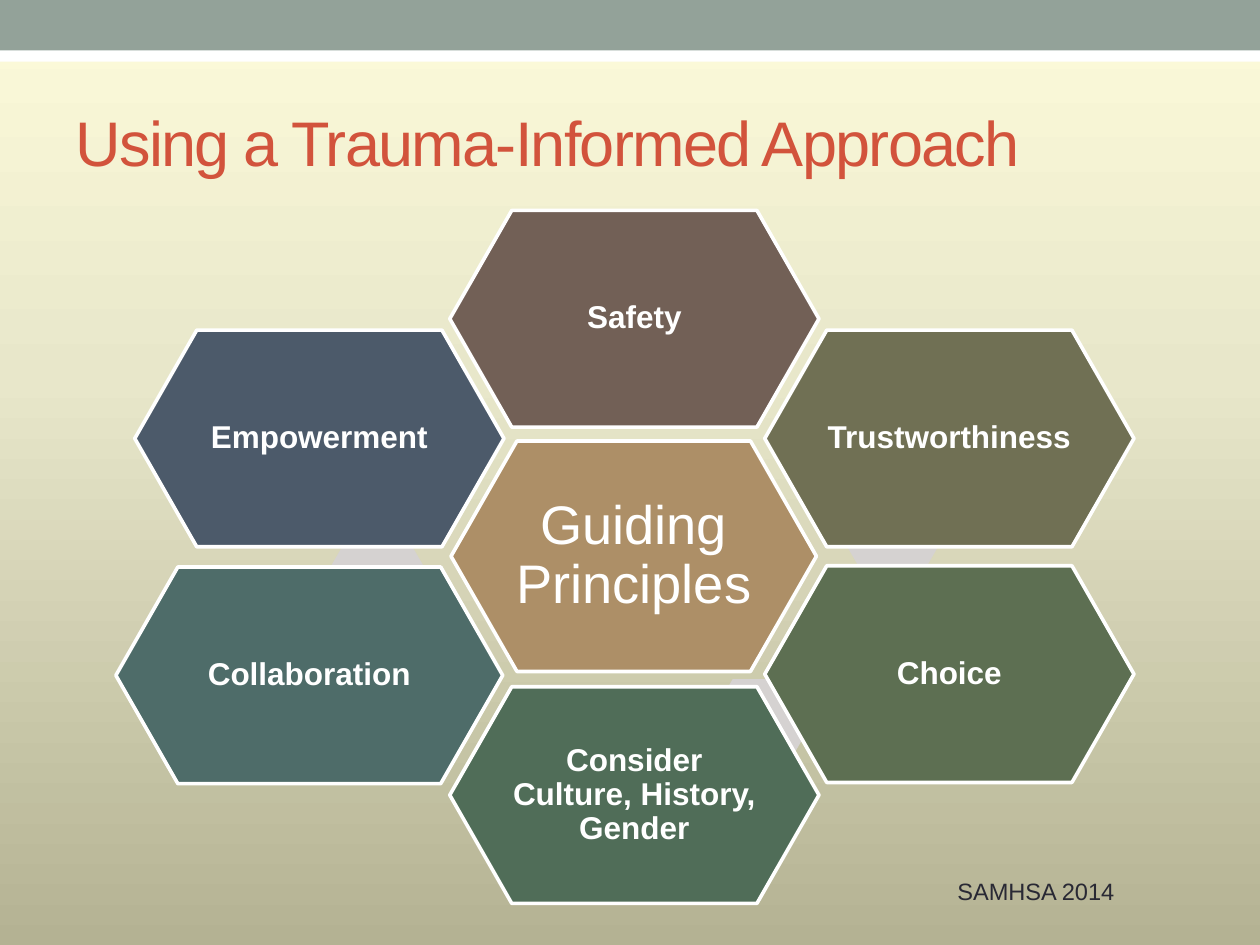
from copy import deepcopy

from pptx import Presentation
from pptx.dml.color import RGBColor
from pptx.enum.shapes import MSO_SHAPE
from pptx.enum.text import MSO_ANCHOR, MSO_AUTO_SIZE, PP_ALIGN
from pptx.util import Inches, Pt

COLORS = {
    "white": "FFFFFF",
    "band": "93A299",
    "title": "D2533C",
    "source": "292934",
    "accent": "D5D2D1",
    "center": "AD8F67",
    "safety": "726056",
    "trust": "707054",
    "choice": "5D6F52",
    "culture": "506D58",
    "collaboration": "4E6C69",
    "empowerment": "4C5A6A",
}
BACKGROUND_STOPS = [(0, "FDFBDA"), (0.4, "E8E7CA"), (1, "B4B293")]


def add_filled_shape(kind, left, top, width, height, color):
    shape = slide.shapes.add_shape(
        kind, Inches(left), Inches(top), Inches(width), Inches(height))
    shape.shadow.inherit = False
    shape.fill.solid()
    shape.fill.fore_color.rgb = RGBColor.from_string(COLORS[color])
    shape.line.fill.background()
    return shape


def add_run(paragraph, text, size, color, bold=False):
    run = paragraph.add_run()
    run.text = text
    run.font.name = "Arial"
    run.font.size = Pt(size)
    run.font.bold = bold
    run.font.color.rgb = RGBColor.from_string(COLORS[color])
    return run


presentation = Presentation()
presentation.slide_width = Inches(10)
presentation.slide_height = Inches(7.5)
slide = presentation.slides.add_slide(presentation.slide_layouts[5])

# Background gradient, top to bottom, with a third stop added
background = slide.background.fill
background.gradient()
background.gradient_angle = 270
stop_list = slide.element.xpath(".//p:bg//a:gsLst")[0]
stop_list.insert(1, deepcopy(stop_list[0]))
for stop, (position, color) in zip(background.gradient_stops, BACKGROUND_STOPS):
    stop.position = position
    stop.color.rgb = RGBColor.from_string(color)

# Top bands
add_filled_shape(MSO_SHAPE.RECTANGLE, 0, 0.24, 10, 0.25, "white")
add_filled_shape(MSO_SHAPE.RECTANGLE, 0, 0, 10, 0.4, "band")

# Title
title = slide.shapes.title
title.left, title.top = Inches(0.5), Inches(0.58)
title.width, title.height = Inches(9), Inches(1.08)
title.text_frame.auto_size = MSO_AUTO_SIZE.NONE
title.text_frame.vertical_anchor = MSO_ANCHOR.MIDDLE
paragraph = title.text_frame.paragraphs[0]
paragraph.alignment = PP_ALIGN.LEFT
run = add_run(paragraph, "Using a Trauma-Informed Approach", 36, "title")
run.font._element.set("spc", "-100")

# Hexagons: text, left, top, width, height, color, size, accent position behind
hexagons = [
    ("Guiding Principles", 3.58, 3.5, 2.9, 1.83, "center", 31, None),
    ("Safety", 3.57, 1.67, 2.93, 1.72, "safety", 18, (5.31, 2.57)),
    ("Trustworthiness", 6.07, 2.62, 2.93, 1.72, "trust", 18, (6.67, 3.89)),
    ("Choice", 6.07, 4.49, 2.93, 1.72, "choice", 18, (5.61, 5.39)),
    ("Consider Culture, History, Gender", 3.57, 5.45, 2.93, 1.72, "culture", 18,
     (3.95, 5.55)),
    ("Collaboration", 0.92, 4.5, 3.07, 1.72, "collaboration", 18, (2.58, 4.22)),
    ("Empowerment", 1.07, 2.62, 2.93, 1.72, "empowerment", 18, None),
]
for text, left, top, width, height, color, size, accent_position in hexagons:
    if accent_position:
        accent = add_filled_shape(
            MSO_SHAPE.HEXAGON, *accent_position, 0.83, 0.71, "accent")
        accent.adjustments[0] = 0.289
    hexagon = add_filled_shape(
        MSO_SHAPE.HEXAGON, left, top, width, height, color)
    hexagon.adjustments[0] = 0.286
    hexagon.line.color.rgb = RGBColor.from_string(COLORS["white"])
    hexagon.line.width = Pt(2.08)
    frame = hexagon.text_frame
    frame.word_wrap = True
    frame.vertical_anchor = MSO_ANCHOR.MIDDLE
    frame.margin_left = frame.margin_right = Inches(0.03)
    frame.margin_top = frame.margin_bottom = Inches(0.03)
    paragraph = frame.paragraphs[0]
    paragraph.alignment = PP_ALIGN.CENTER
    paragraph.line_spacing = 0.9
    add_run(paragraph, text, size, "white", bold=color != "center")

# Source
source = slide.shapes.add_textbox(
    Inches(7.5), Inches(6.91), Inches(2.25), Inches(0.33))
source.text_frame.word_wrap = True
source.text_frame.auto_size = MSO_AUTO_SIZE.SHAPE_TO_FIT_TEXT
add_run(source.text_frame.paragraphs[0], "SAMHSA 2014", 13.5, "source")

presentation.save("out.pptx")
